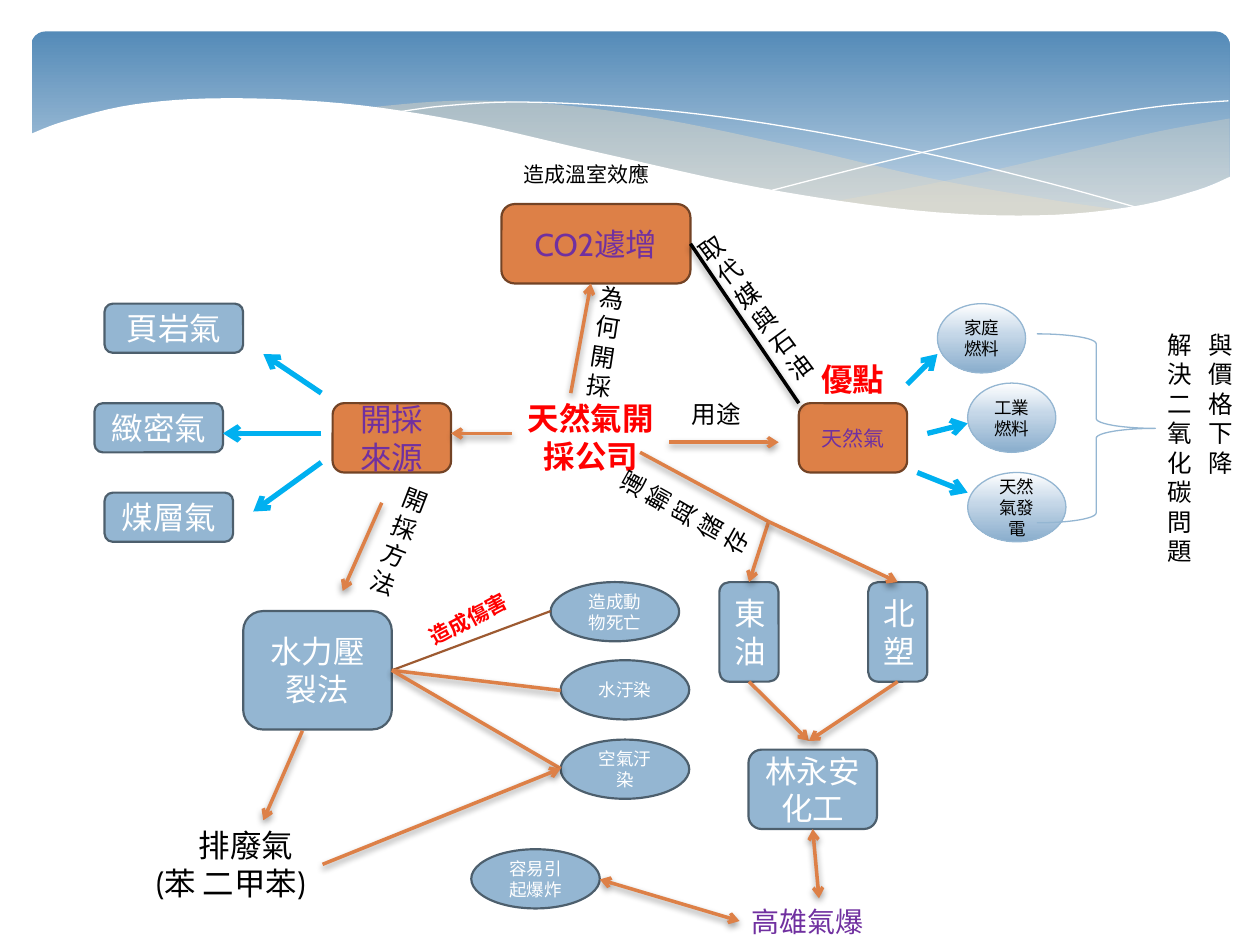
import copy

import pptx
import pptx.dml.color
import pptx.enum.shapes
import pptx.enum.text
import pptx.oxml
import pptx.oxml.ns
import pptx.util
from lxml import etree

Inches = pptx.util.Inches
RGBColor = pptx.dml.color.RGBColor
SHAPE = pptx.enum.shapes.MSO_SHAPE
ALIGN = pptx.enum.text.PP_ALIGN
qn = pptx.oxml.ns.qn

ORANGE = RGBColor(0xDD, 0x80, 0x47)
BROWN = RGBColor(0x73, 0x43, 0x25)
RUST = RGBColor(0x9D, 0x5A, 0x31)
BLUE = RGBColor(0x94, 0xB6, 0xD2)
SLATE = RGBColor(0x4D, 0x5F, 0x6D)
CYAN = RGBColor(0x00, 0xB0, 0xF0)
PURPLE = RGBColor(0x70, 0x30, 0xA0)
RED = RGBColor(0xFF, 0x00, 0x00)
BLACK = RGBColor(0x00, 0x00, 0x00)
WHITE = RGBColor(0xFF, 0xFF, 0xFF)
SAND = RGBColor(0xEB, 0xDD, 0xC3)
BAND_STOPS = [(0, RGBColor(0x55, 0x8B, 0xB8)), (0.9, RGBColor(0xBF, 0xD3, 0xE4))]
FUEL_STOPS = [(0, WHITE), (0.44, RGBColor(0xC5, 0xD7, 0xE8)),
              (1, RGBColor(0x89, 0xAD, 0xCC))]
FONT = "Cabin"
TOP, LEFT, BOTTOM, RIGHT = range(4)


def write(shape, text, size, color, align=None, bold=False, font=FONT):
    """Fill a shape with one paragraph per line of text."""
    frame = shape.text_frame
    frame.word_wrap = True
    for index, line in enumerate(text.split("\n")):
        paragraph = frame.add_paragraph() if index else frame.paragraphs[0]
        paragraph.alignment = align
        run = paragraph.add_run()
        run.text = line
        run.font.name = font
        run.font.size = pptx.util.Pt(size)
        run.font.bold = bold
        run.font.color.rgb = color


def add_label(slide, box, text, size=14, color=BLACK, rotation=0, **style):
    label = slide.shapes.add_textbox(*map(Inches, box))
    write(label, text, size, color, **style)
    label.text_frame.auto_size = pptx.enum.text.MSO_AUTO_SIZE.SHAPE_TO_FIT_TEXT
    label.rotation = rotation
    return label


def add_preset(slide, preset, box, line=None, width=1.25):
    shape = slide.shapes.add_shape(preset, *map(Inches, box))
    shape.shadow.inherit = False
    if line is None:
        shape.line.fill.background()
    else:
        shape.line.color.rgb = line
        shape.line.width = pptx.util.Pt(width)
    return shape


def add_node(slide, box, text, size=18, color=WHITE, fill=BLUE, line=SLATE,
             preset=SHAPE.ROUNDED_RECTANGLE):
    node = add_preset(slide, preset, box, line)
    node.fill.solid()
    node.fill.fore_color.rgb = fill
    node.text_frame.vertical_anchor = pptx.enum.text.MSO_ANCHOR.MIDDLE
    write(node, text, size, color, ALIGN.CENTER)
    return node


def set_gradient(shape, stops):
    """Vertical gradient, first stop on top."""
    shape.fill.gradient()
    shape.fill.gradient_angle = 270
    stop_list = shape._element.spPr.find(".//" + qn("a:gsLst"))
    while len(stop_list) < len(stops):
        stop_list.append(copy.deepcopy(stop_list[0]))
    for stop, (position, color) in zip(shape.fill.gradient_stops, stops):
        stop.position = position
        stop.color.rgb = color


def add_link(slide, start, end, color=ORANGE, width=2, arrows="end", shadow=True):
    """Join two points; an end may also be a (node, side) pair."""
    fixed = [(0, 0) if hasattr(end_point[0], "shape_id") else end_point
             for end_point in (start, end)]
    link = slide.shapes.add_connector(pptx.enum.shapes.MSO_CONNECTOR.STRAIGHT,
                                      *(Inches(value) for point in fixed for value in point))
    for end_point, join in ((start, link.begin_connect), (end, link.end_connect)):
        if hasattr(end_point[0], "shape_id"):
            join(*end_point)
    link.line.color.rgb = color
    link.line.width = pptx.util.Pt(width)
    outline = link.line._get_or_add_ln()
    for tag in {"": [], "end": ["a:tailEnd"], "both": ["a:headEnd", "a:tailEnd"]}[arrows]:
        etree.SubElement(outline, qn(tag), type="arrow")
    effects = etree.SubElement(link._element.spPr, qn("a:effectLst"))
    if shadow:
        outer = etree.SubElement(effects, qn("a:outerShdw"), blurRad="50800",
                                 dist="25400", dir="5400000", rotWithShape="0")
        tone = etree.SubElement(outer, qn("a:srgbClr"), val="000000")
        etree.SubElement(tone, qn("a:alpha"), val="38000")


def smooth(points, steps=6):
    """Catmull-Rom curve through the points."""
    padded = [points[0], *points, points[-1]]
    curve = []
    for a, b, c, d in zip(padded, padded[1:], padded[2:], padded[3:]):
        for step in range(steps):
            t = step / steps
            curve.append(tuple(
                (2 * q + (r - p) * t + (2 * p - 5 * q + 4 * r - s) * t ** 2
                 + (3 * q - p - 3 * r + s) * t ** 3) / 2
                for p, q, r, s in zip(a, b, c, d)))
    return curve + [points[-1]]


def add_wave(slide, points, fill=None, opacity=100):
    """Filled outline, or a thin white line when there is no fill."""
    corners = [(Inches(x), Inches(y)) for x, y in points]
    builder = slide.shapes.build_freeform(*corners[0], scale=1.0)
    builder.add_line_segments(corners[1:], close=fill is not None)
    wave = builder.convert_to_shape()
    wave.shadow.inherit = False
    if fill is None:
        wave.fill.background()
        wave.line.color.rgb = WHITE
        wave.line.width = 0
        return
    wave.line.fill.background()
    wave.fill.solid()
    wave.fill.fore_color.rgb = fill
    tone = wave._element.spPr.find(qn("a:solidFill"))[0]
    etree.SubElement(tone, qn("a:alpha"), val=str(opacity * 1000))


def add_background(slide):
    band = add_preset(slide, SHAPE.ROUNDED_RECTANGLE, (0.25, 0.25, 9.51, 1.56))
    band.adjustments[0] = 0.07
    set_gradient(band, BAND_STOPS)
    add_wave(slide, smooth([(6.61, 1.6), (7.53, 1.43), (8.61, 1.18), (9.21, 1.04), (9.76, 0.94)])
             + smooth([(9.76, 1.41), (9.28, 1.58), (8.72, 1.69), (8.03, 1.72),
                       (7.32, 1.68), (6.61, 1.6)]), SAND, 29)
    add_wave(slide, smooth([(2.86, 0.86), (3.61, 0.8), (4.42, 0.83), (5.28, 0.95),
                            (6.29, 1.16), (7.41, 1.42), (8.37, 1.59), (8.93, 1.67)])
             + smooth([(8.93, 1.67), (8.28, 1.73), (7.48, 1.7), (6.65, 1.61),
                       (5.66, 1.43), (4.49, 1.16), (3.62, 0.97), (2.86, 0.86)]), SAND, 40)
    add_wave(slide, smooth([(3.09, 0.9), (3.53, 0.84), (4.16, 0.81), (5.1, 0.86),
                            (6.08, 0.98), (7.27, 1.2), (8.31, 1.45), (9.07, 1.66)]))
    add_wave(slide, smooth([(6.13, 1.51), (6.95, 1.3), (7.76, 1.11), (8.66, 0.93),
                            (9.24, 0.84), (9.75, 0.8)]))
    add_wave(slide, smooth([(0.23, 1.07), (0.52, 0.96), (1.06, 0.83), (1.77, 0.78), (2.71, 0.82),
                            (3.65, 0.96), (4.75, 1.21), (6.03, 1.49), (7.26, 1.67), (8.23, 1.71),
                            (8.99, 1.64), (9.5, 1.51), (9.77, 1.4)])
             + [(9.77, 2.24), (0.23, 2.24)], WHITE)


def add_uses(slide, gas):
    """Uses of the gas, with their benefits behind a brace."""
    for x, y, width, text in ((7.44, 2.41, 0.7, "家庭燃料"), (7.68, 3.04, 0.7, "工業燃料"),
                              (7.68, 3.75, 0.78, "天然氣發電")):
        fuel = add_node(slide, (x, y, width, 0.55), text, 10, BLACK, line=BLUE, preset=SHAPE.OVAL)
        fuel.line.width = pptx.util.Pt(0.75)
        set_gradient(fuel, FUEL_STOPS)
    for start, end in (((7.28, 3.75), (7.68, 3.91)), ((7.36, 3.44), (7.68, 3.36)),
                       ((7.2, 3.05), (7.44, 2.81))):
        add_link(slide, start, end, CYAN, 3, shadow=False)
    brace = add_preset(slide, SHAPE.RIGHT_BRACE, (8.23, 2.65, 0.94, 1.5), BLUE, 0.75)
    brace.fill.background()
    add_label(slide, (9.17, 2.57, 0.31, 2.22), "解決二氧化碳問題")
    add_label(slide, (9.49, 2.57, 0.24, 1.28), "與價格下降")
    add_label(slide, (6.42, 2.81, 0.7, 0.34), "優點", 18, RED, bold=True)
    add_link(slide, (5.31, 3.51), (6.18, 3.51))
    add_label(slide, (5.39, 3.12, 0.7, 0.34), "用途")


def add_sources(slide, source):
    """Gas sources on the left."""
    add_link(slide, (4.06, 3.44), (3.58, 3.44))
    for x, y, width, text in ((0.83, 2.41, 1.1, "頁岩氣"), (0.75, 3.2, 1.02, "緻密氣"),
                              (0.83, 3.91, 1.02, "煤層氣")):
        add_node(slide, (x, y, width, 0.39), text)
    for start, end in (((2.55, 3.12), (2.09, 2.81)), ((2.55, 3.44), (1.77, 3.44)),
                       ((2.55, 3.67), (2.01, 4.06))):
        add_link(slide, start, end, CYAN, 3, shadow=False)


def add_fracturing(slide):
    """Extraction method and the harm it does."""
    add_link(slide, (3.03, 3.99), (2.72, 4.69))
    add_label(slide, (2.98, 3.75, 0.22, 1.04), "開\n採\n方\n法", rotation=21.2)
    method = add_node(slide, (1.93, 4.85, 1.18, 0.94), "水力壓裂法")
    for x, y, text in ((4.37, 4.62, "造成動物死亡"), (4.45, 5.24, "水汙染"),
                       (4.45, 5.87, "空氣汙染"), (3.74, 6.74, "容易引起爆炸")):
        add_node(slide, (x, y, 1.02, 0.47), text, 10, preset=SHAPE.OVAL)
    add_link(slide, (method, RIGHT), (4.37, 4.85), RUST, 1.25, "", shadow=False)
    for y in (5.48, 6.1):
        add_link(slide, (method, RIGHT), (4.45, y), arrows="")
    add_label(slide, (3.27, 4.7, 1.13, 0.3), "造成傷害", 12, RED, 332.3, bold=True)
    waste = add_label(slide, (1.14, 6.51, 1.42, 0.71), "排廢氣\n(苯 二甲苯)", 18)
    waste.text_frame.paragraphs[0]._p.get_or_add_pPr().set("indent", str(Inches(0.34)))
    add_link(slide, (2.4, 5.8), (2.09, 6.51))
    add_link(slide, (2.56, 6.86), (4.45, 6.1))


def add_transport(slide):
    """Transport and storage companies, down to the explosion."""
    add_label(slide, (5.25, 3.45, 0.35, 1.28), "運\n輸\n與\n儲\n存", rotation=299.1)
    fork = (6.1, 4.14)
    add_link(slide, (5.08, 3.59), fork, arrows="")
    for x, name in ((5.71, "東油"), (6.89, "北塑")):
        company = add_node(slide, (x, 4.62, 0.47, 0.79), name)
        add_link(slide, fork, (company, TOP))
        add_link(slide, (company, BOTTOM), (6.42, 5.88))
    chemical = add_node(slide, (5.94, 5.95, 1.02, 0.63), "林永安化工")
    add_label(slide, (5.87, 7.13, 1.26, 0.37), "高雄氣爆", 16, PURPLE)
    add_link(slide, (chemical, BOTTOM), (6.5, 7.13), arrows="both")
    add_link(slide, (4.76, 6.98), (5.87, 7.31), arrows="both")


def main():
    presentation = pptx.Presentation()
    presentation.slide_width, presentation.slide_height = Inches(10), Inches(7.5)
    slide = presentation.slides.add_slide(presentation.slide_layouts[6])
    add_background(slide)

    # Centre and the three orange topics
    add_label(slide, (4.06, 3.12, 1.26, 0.71), "天然氣開採公司", 18, RED,
              align=ALIGN.CENTER, bold=True, font="Noto Sans CJK SC")
    gas, source, carbon = (
        add_node(slide, box, text, size, PURPLE, ORANGE, BROWN) for box, text, size in (
            ((6.34, 3.2, 0.86, 0.55), "天然氣", 12),
            ((2.64, 3.2, 0.94, 0.55), "開採來源", 18),
            ((3.98, 1.62, 1.5, 0.63), "CO2遽增", 18)))

    # Why gas is extracted
    add_link(slide, (4.53, 3.12), (4.69, 2.25))
    add_label(slide, (4.61, 2.19, 0.31, 1.04), "為何開採", rotation=8.8)
    add_label(slide, (4.06, 1.23, 1.34, 0.3), "造成溫室效應", 12)
    add_link(slide, (carbon, RIGHT), (6.34, 3.2), BLACK, arrows="")
    add_label(slide, (5.79, 1.64, 0.55, 1.51), "取\n代\n媒\n與\n石油", rotation=323.4)

    add_uses(slide, gas)
    add_sources(slide, source)
    add_fracturing(slide)
    add_transport(slide)
    presentation.save("out.pptx")


if __name__ == "__main__":
    main()
